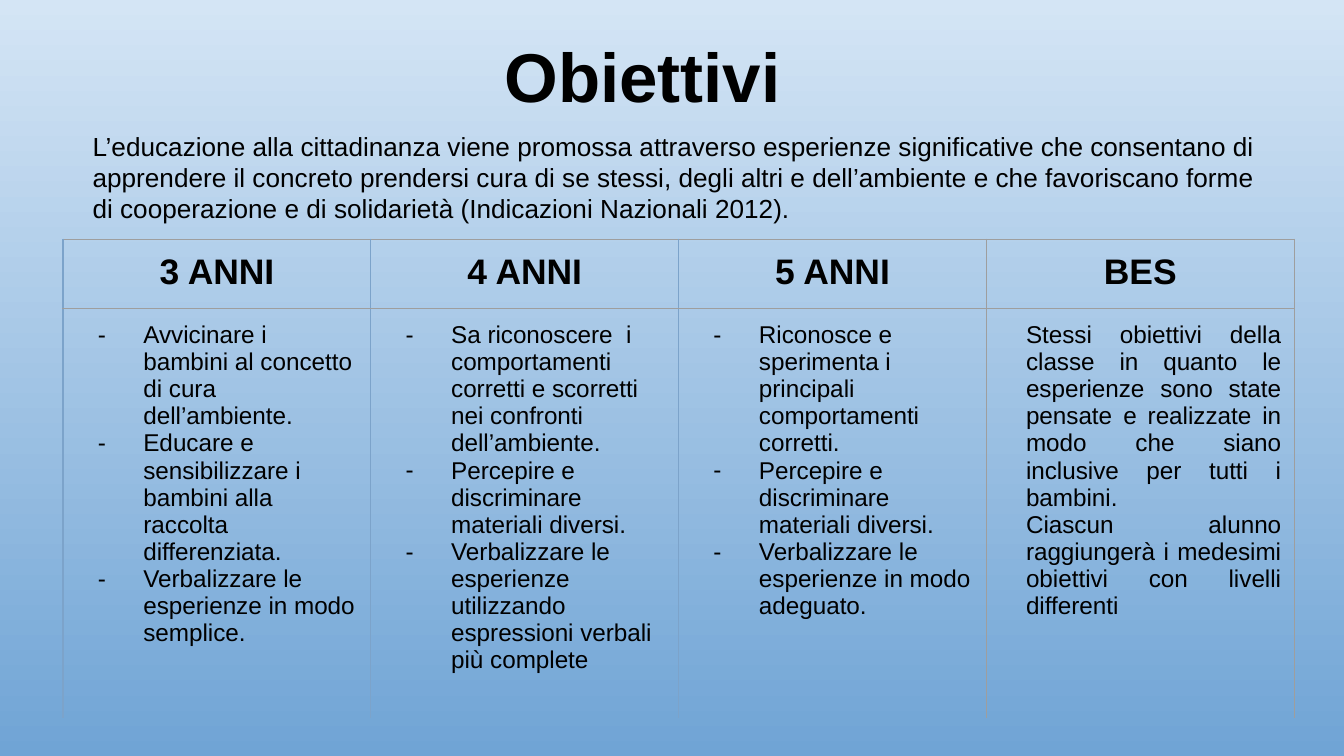
from dataclasses import dataclass

from lxml import etree
from pptx import Presentation
from pptx import util as u
from pptx.dml.color import RGBColor
from pptx.enum import text as t
from pptx.oxml import ns

Cm, Pt = u.Cm, u.Pt


@dataclass(frozen=True)
class Theme:
    font: str = "Arial"
    ink: str = "000000"
    sky: str = "D4E5F5"
    sea: str = "70A4D5"
    rule: str = "9E9E9E"
    soft_rule: str = "7CA3CA"
    title: int = 37
    head: int = 19
    intro: int = 14
    body: int = 13


THEME = Theme()
INSET = Cm(0.25)

INTRO = (
    "L’educazione alla cittadinanza viene promossa attraverso esperienze "
    "significative che consentano di apprendere il concreto prendersi cura "
    "di se stessi, degli altri e dell’ambiente e che favoriscano forme di "
    "cooperazione e di solidarietà (Indicazioni Nazionali 2012)."
)
SORTING = "Percepire e discriminare materiali diversi."
GOALS = {
    "3 ANNI": [
        "Avvicinare i bambini al concetto di cura dell’ambiente.",
        "Educare e sensibilizzare i bambini alla raccolta differenziata.",
        "Verbalizzare le esperienze in modo semplice.",
    ],
    "4 ANNI": [
        "Sa riconoscere  i comportamenti corretti e scorretti nei confronti dell’ambiente.",
        SORTING,
        "Verbalizzare le esperienze utilizzando espressioni verbali più complete",
    ],
    "5 ANNI": [
        "Riconosce e sperimenta i principali comportamenti corretti.",
        SORTING,
        "Verbalizzare le esperienze in modo adeguato.",
    ],
    "BES": [
        "Stessi obiettivi della classe in quanto le esperienze sono state pensate "
        "e realizzate in modo che siano inclusive per tutti i bambini.",
        "Ciascun alunno raggiungerà i medesimi obiettivi con livelli differenti",
    ],
}


def add_node(parent, tag, **attrs):
    node = etree.SubElement(parent, ns.qn(tag))
    for name, value in attrs.items():
        node.set(name, str(value))
    return node


def write(tf, lines, size, bold=False, align=t.PP_ALIGN.LEFT, left=0, hang=0, bullet=None):
    for i, line in enumerate(lines):
        p = tf.paragraphs[0] if i == 0 else tf.add_paragraph()
        p.alignment = align
        pPr = p._p.get_or_add_pPr()
        pPr.set("marL", str(int(left)))
        pPr.set("indent", str(-int(hang)))
        if bullet:
            add_node(add_node(pPr, "a:buClr"), "a:srgbClr", val=THEME.ink)
            add_node(pPr, "a:buFont", typeface=THEME.font)
            add_node(pPr, "a:buChar", char=bullet)
        r = p.add_run()
        r.text = line
        for font in (p.font, r.font):
            font.name = THEME.font
            font.size = Pt(size)
            font.bold = bold
            font.color.rgb = RGBColor.from_string(THEME.ink)


def set_insets(box):
    box.margin_left = box.margin_top = box.margin_right = box.margin_bottom = INSET


def set_borders(cell, left, right, top, bottom):
    tcPr = cell._tc.get_or_add_tcPr()
    for tag, color in (("a:lnL", left), ("a:lnR", right), ("a:lnT", top), ("a:lnB", bottom)):
        ln = add_node(tcPr, tag, w=int(Pt(0.75)))
        if color:
            add_node(add_node(ln, "a:solidFill"), "a:srgbClr", val=color)
        else:
            add_node(ln, "a:noFill")


def paint_background(s):
    fill = s.background.fill
    fill.gradient()
    fill.gradient_angle = 270
    for stop, color in zip(fill.gradient_stops, (THEME.sky, THEME.sea)):
        stop.color.rgb = RGBColor.from_string(color)


def place_title(s, x, y, w, h):
    sp = s.shapes.title
    sp.left, sp.top, sp.width, sp.height = x, y, w, h
    tf = sp.text_frame
    tf.vertical_anchor = t.MSO_ANCHOR.MIDDLE
    tf.auto_size = t.MSO_AUTO_SIZE.NONE
    set_insets(tf)
    write(tf, ["Obiettivi"], THEME.title, bold=True, align=t.PP_ALIGN.CENTER)


def place_intro(s, x, y, w, h):
    tf = s.shapes.add_textbox(x, y, w, h).text_frame
    tf.word_wrap = True
    tf.auto_size = t.MSO_AUTO_SIZE.SHAPE_TO_FIT_TEXT
    set_insets(tf)
    write(tf, [INTRO], THEME.intro)


def place_goals(s, x, y, w, h):
    head_h = Cm(1.31)
    table = s.shapes.add_table(2, len(GOALS), x, y, w, h).table
    table.first_row = table.horz_banding = False
    table.rows[0].height = head_h
    table.rows[1].height = h - head_h
    last = len(GOALS) - 1
    for i, (age, goals) in enumerate(GOALS.items()):
        table.columns[i].width = w // len(GOALS)
        head, body = table.cell(0, i), table.cell(1, i)
        left = THEME.rule if i == last else THEME.soft_rule
        right = THEME.rule if i >= last - 1 else THEME.soft_rule
        for cell, top, bottom in ((head, THEME.rule, THEME.rule), (body, THEME.rule, None)):
            set_insets(cell)
            set_borders(cell, left, right, top, bottom)
            cell.fill.background()
        write(head.text_frame, [age], THEME.head, bold=True, align=t.PP_ALIGN.CENTER)
        if i == last:
            layout = dict(align=t.PP_ALIGN.JUSTIFY, left=Cm(0.5))
        else:
            layout = dict(left=Cm(1.27), hang=Cm(0.86), bullet="-")
        write(body.text_frame, goals, THEME.body, **layout)


def main():
    prs = Presentation()
    prs.slide_width, prs.slide_height = Cm(25.4), Cm(14.29)
    s = prs.slides.add_slide(prs.slide_layouts[5])
    paint_background(s)
    place_title(s, Cm(0.31), Cm(0.25), Cm(23.67), Cm(2.34))
    place_goals(s, Cm(1.19), Cm(4.52), Cm(23.27), Cm(9.06))
    place_intro(s, Cm(1.5), Cm(2.21), Cm(22.99), Cm(2.31))
    prs.save("out.pptx")


if __name__ == "__main__":
    main()
